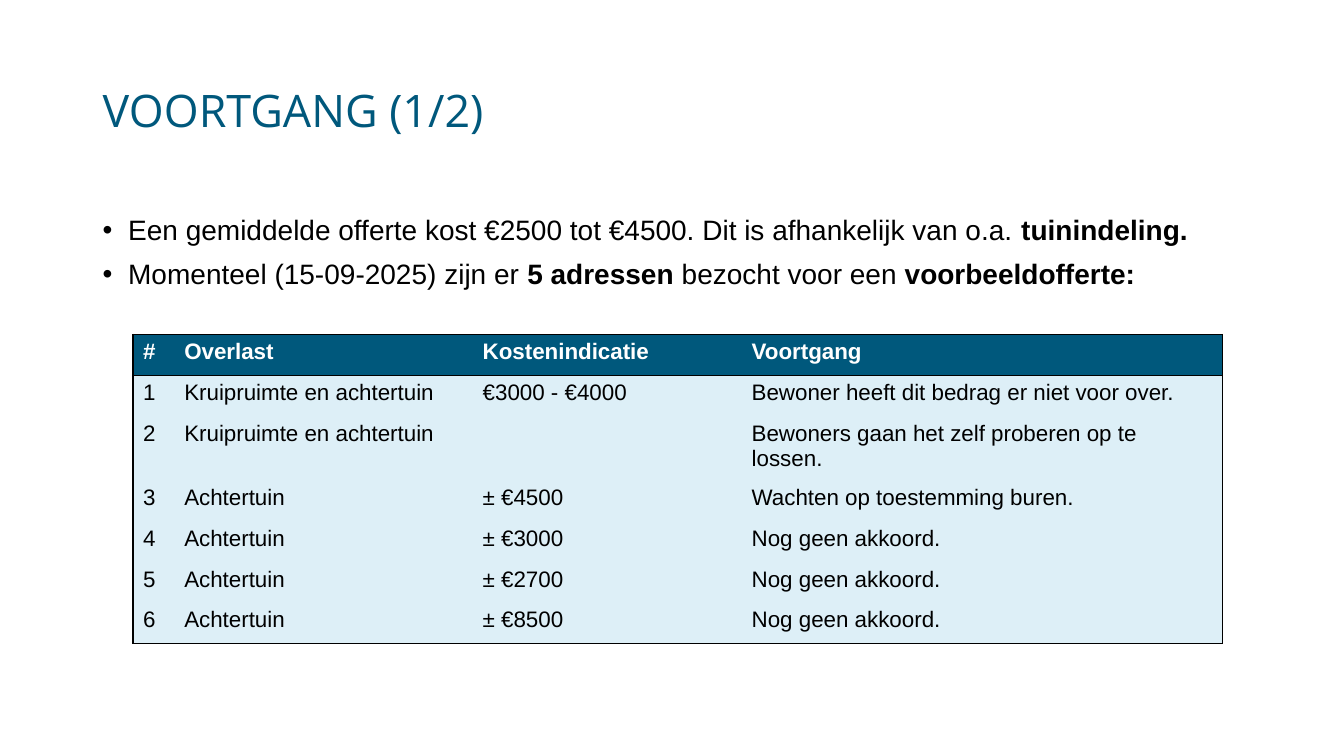
from lxml.etree import SubElement
from pptx import Presentation
from pptx.dml.color import RGBColor
from pptx.enum.text import MSO_ANCHOR as Anchor
from pptx.oxml import parse_xml
from pptx.oxml.ns import nsdecls, qn
from pptx.util import Cm, Pt

BLUE, PALE, BLACK, WHITE = "00587C", "DDEFF7", "000000", "FFFFFF"

BULLETS = [
    [("Een gemiddelde offerte kost €2500 tot €4500. Dit is afhankelijk van o.a. ", False),
     ("tuinindeling.", True)],
    [("Momenteel (15-09-2025) zijn er ", False), ("5 adressen ", True),
     ("bezocht voor een ", False), ("voorbeeldofferte:", True)],
]
COLUMN_WIDTHS = [1.04, 7.52, 6.78, 12.12]
ROW_HEIGHT = 1.03
ROWS = [
    ("#", "Overlast", "Kostenindicatie", "Voortgang"),
    ("1", "Kruipruimte en achtertuin", "€3000 - €4000",
     "Bewoner heeft dit bedrag er niet voor over."),
    ("2", "Kruipruimte en achtertuin", "",
     "Bewoners gaan het zelf proberen op te lossen."),
    ("3", "Achtertuin", "± €4500", "Wachten op toestemming buren."),
    ("4", "Achtertuin", "± €3000", "Nog geen akkoord."),
    ("5", "Achtertuin", "± €2700", "Nog geen akkoord."),
    ("6", "Achtertuin", "± €8500", "Nog geen akkoord."),
]


def color(hex_string):
    return RGBColor.from_string(hex_string)


def add_span(para, text, size, fill, bold=False, font="Arial"):
    span = para.add_run()
    span.text = text
    span.font.name = font
    span.font.size = Pt(size)
    span.font.bold = bold
    span.font.color.rgb = color(fill)


def add_frame(page, left, top, width, height):
    box = page.shapes.add_textbox(Cm(left), Cm(top), Cm(width), Cm(height))
    box.text_frame.word_wrap = True
    return box.text_frame


def add_title(page, left, top, width, height):
    frame = add_frame(page, left, top, width, height)
    frame.vertical_anchor = Anchor.MIDDLE
    para = frame.paragraphs[0]
    para.line_spacing = 0.9
    add_span(para, "VOORTGANG (1/2)", 32, BLUE, font="Open Sans")


def add_bullets(page, left, top, width, height):
    frame = add_frame(page, left, top, width, height)
    for index, spans in enumerate(BULLETS):
        para = frame.add_paragraph() if index else frame.paragraphs[0]
        para.line_spacing = 0.9
        para.space_before = Pt(10 if index else 0)
        # Hanging bullet
        props = para._p.get_or_add_pPr()
        props.set("marL", str(Cm(0.64)))
        props.set("indent", str(-Cm(0.64)))
        SubElement(props, qn("a:buFont")).set("typeface", "Arial")
        SubElement(props, qn("a:buChar")).set("char", "•")
        for text, bold in spans:
            add_span(para, text, 20, BLACK, bold)


def set_borders(cell, drawn_sides):
    props = cell._tc.get_or_add_tcPr()
    for position, side in enumerate("LRTB"):
        paint = "<a:noFill/>"
        if side in drawn_sides:
            paint = f'<a:solidFill><a:srgbClr val="{BLACK}"/></a:solidFill>'
        line = parse_xml(f'<a:ln{side} {nsdecls("a")} w="{Pt(1)}">{paint}</a:ln{side}>')
        props.insert(position, line)


def add_progress_table(page, left, top):
    row_count, column_count = len(ROWS), len(COLUMN_WIDTHS)
    table = page.shapes.add_table(
        row_count, column_count, Cm(left), Cm(top),
        Cm(sum(COLUMN_WIDTHS)), Cm(ROW_HEIGHT * row_count)).table
    table.horz_banding = False
    for column, width in zip(table.columns, COLUMN_WIDTHS):
        column.width = Cm(width)
    for r, texts in enumerate(ROWS):
        table.rows[r].height = Cm(ROW_HEIGHT)
        header = r == 0
        for c, text in enumerate(texts):
            cell = table.cell(r, c)
            cell.fill.solid()
            cell.fill.fore_color.rgb = color(BLUE if header else PALE)
            if text:
                add_span(cell.text_frame.paragraphs[0], text, 16,
                         WHITE if header else BLACK, header)
            # Outer frame and the rule under the header
            sides = {"L": c == 0, "R": c == column_count - 1,
                     "T": r <= 1, "B": header or r == row_count - 1}
            set_borders(cell, [side for side, drawn in sides.items() if drawn])


def main():
    deck = Presentation()
    deck.slide_width, deck.slide_height = Cm(33.87), Cm(19.05)
    page = deck.slides.add_slide(deck.slide_layouts[6])
    add_title(page, 2.34, 1.02, 29.21, 3.68)
    add_bullets(page, 2.34, 5.33, 29.21, 11.23)
    add_progress_table(page, 3.35, 8.43)
    deck.save("out.pptx")


if __name__ == "__main__":
    main()
